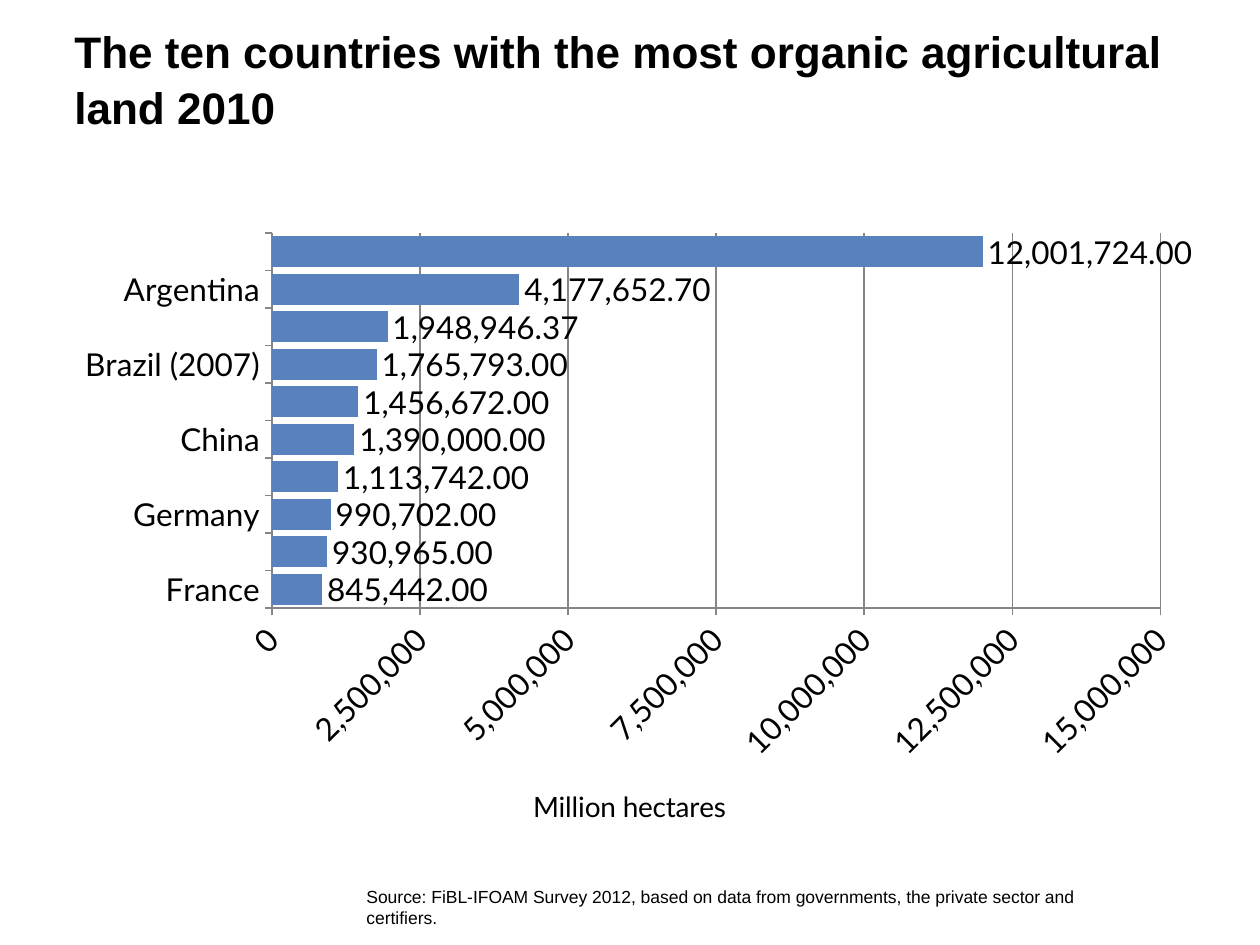
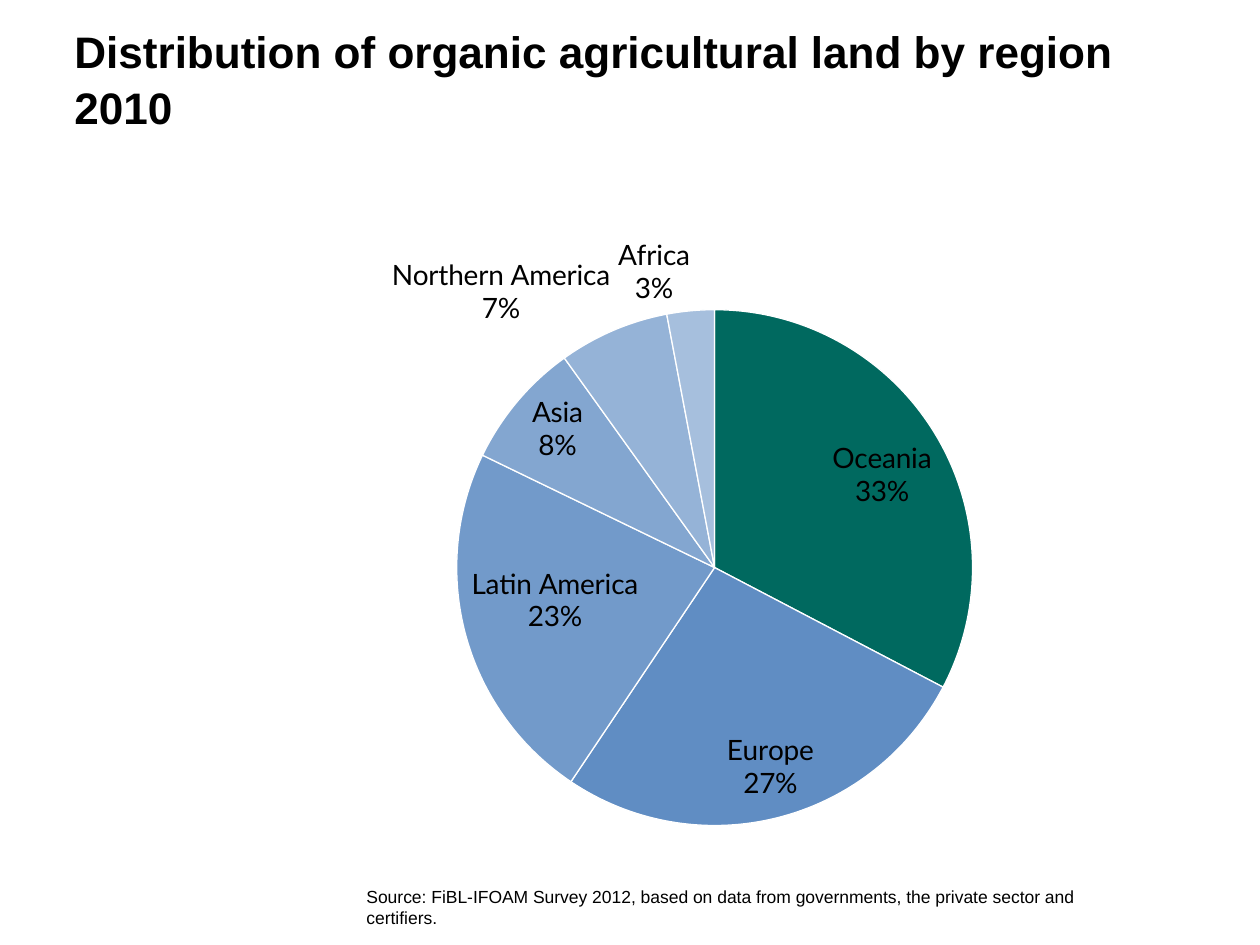
"""Build two slides on organic agricultural land: a ranking and a regional split."""
from dataclasses import dataclass

from lxml import etree
from pptx import Presentation
from pptx import util as u
from pptx.chart import data as chart_data
from pptx.chart.chart import Chart
from pptx.dml.color import RGBColor
from pptx.enum import chart as chart_enum
from pptx.enum import text as text_enum
from pptx.oxml.ns import qn
from pptx.slide import Slide

BLACK, WHITE, GREY = "000000", "FFFFFF", "868686"
BAR_BLUE, PIE_BLUE, OCEANIA_GREEN = "5981BD", "4F81BD", "00695F"
TEXT_FONT, CHART_FONT = "Arial", "Lato"
SOURCE = ("Source: FiBL-IFOAM Survey 2012, based on data from governments, "
          "the private sector and certifiers.")


@dataclass(frozen=True)
class Box:
    left: float
    top: float
    width: float
    height: float

    def lengths(self) -> tuple:
        return tuple(u.Pt(n) for n in (self.left, self.top, self.width, self.height))


@dataclass(frozen=True)
class ChartSlide:
    title: str
    kind: chart_enum.XL_CHART_TYPE
    values: dict[str, float]
    plot: Box


TITLE_BOX = Box(42.5, 18, 649.5, 56)
CHART_BOX = Box(36, 126, 648, 356.4)
SOURCE_BOX = Box(202.3, 502.5, 420, 32)

RANKING = ChartSlide(
    "The ten countries with the most organic agricultural land 2010",
    chart_enum.XL_CHART_TYPE.BAR_CLUSTERED,
    {
        "France": 845442,
        "Uruguay (2006)": 930965,
        "Germany": 990702,
        "Italy": 1113742,
        "China": 1390000,
        "Spain": 1456672,
        "Brazil (2007)": 1765793,
        "United States (2008)": 1948946.37,
        "Argentina": 4177652.7,
        "Australia (2009)": 12001724,
    },
    Box(119.5, 7.2, 507.5, 214.3),
)
REGIONS = ChartSlide(
    "Distribution of organic agricultural land by region 2010",
    chart_enum.XL_CHART_TYPE.PIE,
    {"Oceania": 33, "Europe": 27, "Latin America": 23,
     "Asia": 8, "Northern America": 7, "Africa": 3},
    Box(225, 51, 294.8, 294.8),
)


def colour(value: str) -> RGBColor:
    return RGBColor.from_string(value)


def style_font(font, size: float, name: str = CHART_FONT, bold: bool = False) -> None:
    font.size, font.name, font.bold = u.Pt(size), name, bold
    font.color.rgb = colour(BLACK)


def write_text(frame, content: str, *, size: float, name: str = TEXT_FONT,
               bold: bool = False, line_spacing: float | None = None) -> None:
    frame.text = content
    paragraph = frame.paragraphs[0]
    paragraph.alignment = text_enum.PP_ALIGN.LEFT
    paragraph.line_spacing = line_spacing
    style_font(paragraph.runs[0].font, size, name, bold)


def set_layout(parent, **settings: object) -> None:
    layout = parent.find(qn("c:layout"))
    if layout is None:
        layout = etree.Element(qn("c:layout"))
        parent.insert(0, layout)
    manual = etree.SubElement(layout, qn("c:manualLayout"))
    for tag, value in settings.items():
        etree.SubElement(manual, qn(f"c:{tag}")).set("val", str(value))


def place_plot(chart: Chart, plot: Box) -> None:
    set_layout(chart._chartSpace.chart.plotArea, layoutTarget="inner",
               xMode="edge", yMode="edge",
               x=plot.left / CHART_BOX.width, y=plot.top / CHART_BOX.height,
               w=plot.width / CHART_BOX.width, h=plot.height / CHART_BOX.height)


def style_axis(axis) -> None:
    style_font(axis.tick_labels.font, 18)
    axis.major_tick_mark = chart_enum.XL_TICK_MARK.OUTSIDE
    axis.minor_tick_mark = chart_enum.XL_TICK_MARK.NONE
    axis.format.line.color.rgb = colour(GREY)
    axis.format.line.width = u.Pt(0.75)


def style_bars(chart: Chart) -> None:
    plot = chart.plots[0]
    plot.gap_width = 20
    fill = plot.series[0].format.fill
    fill.solid()
    fill.fore_color.rgb = colour(BAR_BLUE)
    plot.series[0].invert_if_negative = False

    labels = plot.series[0].data_labels
    style_font(labels.font, 18)
    labels.number_format, labels.number_format_is_linked = "#,##0.00", False
    labels.position = chart_enum.XL_LABEL_POSITION.OUTSIDE_END
    labels.show_value = True

    style_axis(chart.category_axis)
    chart.category_axis.has_major_gridlines = False
    hectares = chart.value_axis
    style_axis(hectares)
    hectares.minimum_scale, hectares.maximum_scale = 0, 15_000_000
    hectares.major_unit = 2_500_000
    hectares.tick_labels.number_format = "#,##0"
    hectares.tick_labels.number_format_is_linked = False
    hectares._element.find(f"{qn('c:txPr')}/{qn('a:bodyPr')}").set("rot", "-2700000")
    hectares.has_major_gridlines = True
    gridline = hectares.major_gridlines.format.line
    gridline.color.rgb = colour(GREY)
    gridline.width = u.Pt(0.75)
    write_text(hectares.axis_title.text_frame, "Million hectares", size=16, name=CHART_FONT)
    set_layout(hectares.axis_title._element, xMode="edge", yMode="edge", x=0.41, y=0.9)


def style_pie(chart: Chart) -> None:
    plot = chart.plots[0]
    series = plot.series[0]
    for index in range(len(plot.categories)):
        wedge = series.points[index].format
        wedge.fill.solid()
        wedge.fill.fore_color.rgb = colour(PIE_BLUE if index else OCEANIA_GREEN)
        wedge.line.color.rgb = colour(WHITE)
        wedge.line.width = u.Pt(0.75)
    wedge_colours = series._element.xpath("c:dPt/c:spPr/a:solidFill/a:srgbClr")
    for index, wedge_colour in enumerate(wedge_colours[1:], start=1):
        etree.SubElement(wedge_colour, qn("a:alpha")).set("val", str(100_000 - index * 10_000))

    labels = series.data_labels
    style_font(labels.font, 16)
    labels.number_format, labels.number_format_is_linked = "0%", False
    labels.position = chart_enum.XL_LABEL_POSITION.BEST_FIT
    labels.show_value = False
    labels.show_category_name = labels.show_percentage = True
    separator = etree.Element(qn("c:separator"))
    separator.text = "\n"
    labels._element.find(qn("c:showBubbleSize")).addnext(separator)


def add_chart(slide: Slide, content: ChartSlide) -> Chart:
    data = chart_data.CategoryChartData()
    data.categories = content.values.keys()
    data.add_series("Series 1", content.values.values())
    chart = slide.shapes.add_chart(content.kind, *CHART_BOX.lengths(), data).chart
    chart.has_title = chart.has_legend = False
    style_font(chart.font, 18, TEXT_FONT)
    chart.plots[0].vary_by_categories = content.kind == chart_enum.XL_CHART_TYPE.PIE
    place_plot(chart, content.plot)
    return chart


def add_slide(presentation, content: ChartSlide) -> Chart:
    slide = presentation.slides.add_slide(presentation.slide_layouts[5])
    slide.background.fill.solid()
    slide.background.fill.fore_color.rgb = colour(WHITE)

    title = slide.shapes.title
    title.left, title.top, title.width, title.height = TITLE_BOX.lengths()
    frame = title.text_frame
    frame.margin_left = frame.margin_top = 0
    frame.margin_right, frame.margin_bottom = u.Pt(7.2), u.Pt(3.6)
    frame.vertical_anchor = text_enum.MSO_ANCHOR.MIDDLE
    frame.auto_size = text_enum.MSO_AUTO_SIZE.NONE
    write_text(frame, content.title, size=25.2, bold=True, line_spacing=1.05)

    chart = add_chart(slide, content)
    source = slide.shapes.add_textbox(*SOURCE_BOX.lengths()).text_frame
    source.word_wrap = True
    source.auto_size = text_enum.MSO_AUTO_SIZE.SHAPE_TO_FIT_TEXT
    write_text(source, SOURCE, size=10)
    return chart


def main() -> None:
    presentation = Presentation()
    presentation.slide_width, presentation.slide_height = u.Pt(720), u.Pt(540)
    style_bars(add_slide(presentation, RANKING))
    style_pie(add_slide(presentation, REGIONS))
    presentation.save("out.pptx")


if __name__ == "__main__":
    main()
